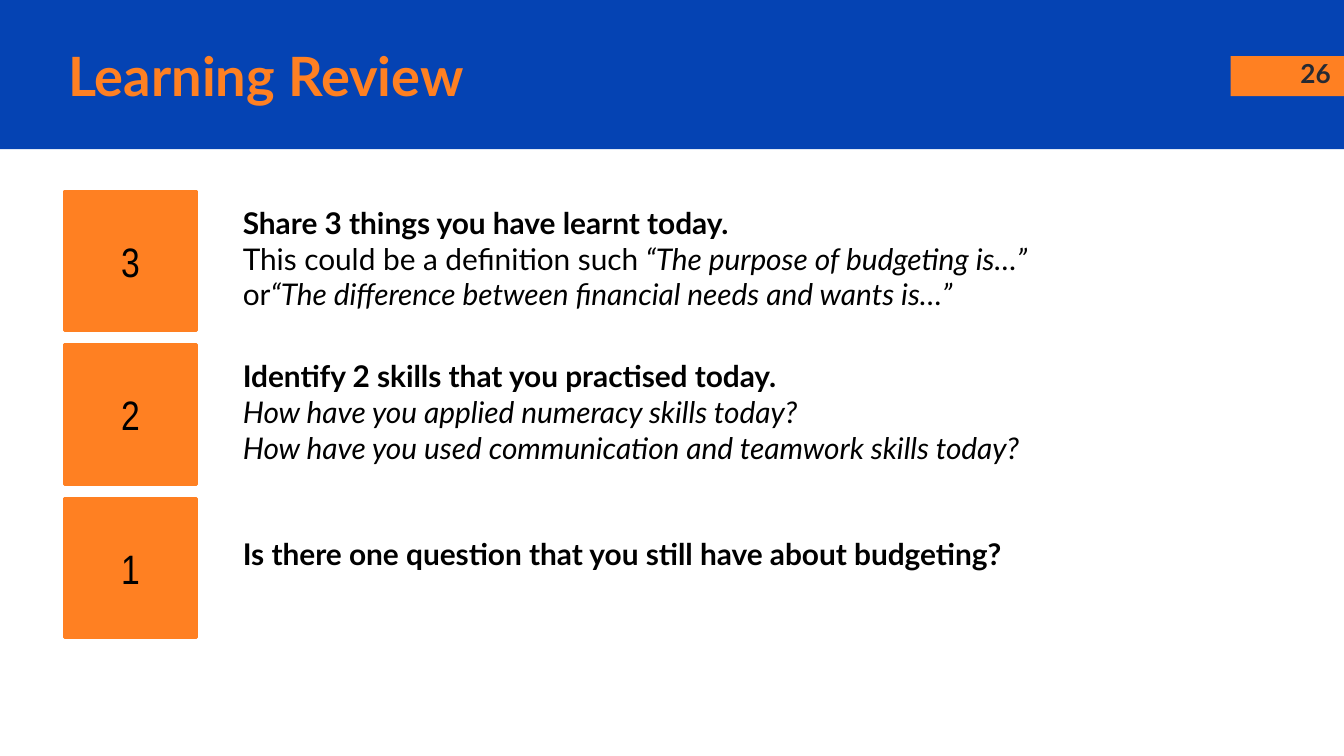
from dataclasses import dataclass

from pptx import Presentation
from pptx import util as u
from pptx.dml.color import RGBColor
from pptx.enum import shapes, text

BLUE = RGBColor(0x05, 0x43, 0xB3)
ORANGE = RGBColor(0xFF, 0x80, 0x22)
DARK = RGBColor(0x26, 0x2A, 0x33)
BLACK = RGBColor(0, 0, 0)
WHITE = RGBColor(0xFF, 0xFF, 0xFF)
BODY_FONT, NUMBER_FONT = "Lato", "Arial Narrow"

SLIDE_W, SLIDE_H = 25.4, 14.28
FIRST_ROW, ROW_STEP = 3.61, 2.9
TILE_LEFT, TILE_W, TILE_H = 1.22, 2.49, 2.64
PROMPT_LEFT = 4.34


@dataclass(frozen=True)
class Box:
    left: float
    top: float
    width: float
    height: float

    def lengths(self) -> list[u.Length]:
        return [u.Cm(v) for v in (self.left, self.top, self.width, self.height)]


@dataclass(frozen=True)
class Run:
    words: str
    bold: bool = False
    italic: bool = False


@dataclass(frozen=True)
class Step:
    number: str
    width: float
    height: float
    paragraphs: list[list[Run]]
    drop: float = 0  # distance of the prompt below the top of its row


STEPS = [
    Step("3", 16.79, 2.57, [
        [Run("Share 3 things you have learnt today.", bold=True)],
        [Run("This could be a definition such"),
         Run(" “The purpose of budgeting is…” ", italic=True),
         Run("or"),
         Run("“The difference between financial needs and wants is…”", italic=True)],
    ]),
    Step("2", 18.44, 2.57, [
        [Run("Identify 2 skills that you practised today.", bold=True)],
        [Run("How have you applied numeracy skills today?", italic=True)],
        [Run("How have you used communication and teamwork skills today?", italic=True)],
    ]),
    Step("1", 17.63, 1.19, [
        [Run("Is there one question that you still have about budgeting?", bold=True)],
    ], drop=0.45),
]


def add_rect(s, box: Box, fill: RGBColor, outlined: bool = False):
    sp = s.shapes.add_shape(shapes.MSO_SHAPE.RECTANGLE, *box.lengths())
    sp.shadow.inherit = False
    sp.fill.solid()
    sp.fill.fore_color.rgb = fill
    if outlined:
        sp.line.color.rgb = fill
        sp.line.width = u.Pt(1.5)
    else:
        sp.line.fill.background()
    return sp


def write(sp, paragraphs: list[list[Run]], size: float, color: RGBColor = BLACK,
          font: str = BODY_FONT, align=text.PP_ALIGN.LEFT,
          anchor=text.MSO_ANCHOR.TOP) -> None:
    """Fill the text frame of a shape, one paragraph per list of runs."""
    tf = sp.text_frame
    tf.word_wrap = True
    tf.vertical_anchor = anchor
    tf.margin_left = tf.margin_right = tf.margin_top = tf.margin_bottom = u.Cm(0.25)
    for i, runs in enumerate(paragraphs):
        p = tf.add_paragraph() if i else tf.paragraphs[0]
        p.alignment = align
        for run in runs:
            r = p.add_run()
            r.text = run.words
            r.font.name = font
            r.font.size = u.Pt(size)
            r.font.color.rgb = color
            r.font.bold = run.bold
            r.font.italic = run.italic


def add_text(s, box: Box, paragraphs: list[list[Run]], size: float, **style) -> None:
    write(s.shapes.add_textbox(*box.lengths()), paragraphs, size, **style)


def add_header(s) -> None:
    add_rect(s, Box(0, 0, SLIDE_W, 2.82), BLUE)
    add_rect(s, Box(23.26, 1.06, 2.14, 0.76), ORANGE)
    add_text(s, Box(23.88, 0.84, 1.52, 1.09), [[Run("26", bold=True)]], 14,
             color=DARK, align=text.PP_ALIGN.RIGHT)
    add_text(s, Box(1.04, 0.71, 16.2, 1.42), [[Run("Learning Review", bold=True)]], 29,
             color=ORANGE, anchor=text.MSO_ANCHOR.MIDDLE)


def add_step(s, step: Step, top: float) -> None:
    tile = add_rect(s, Box(TILE_LEFT, top, TILE_W, TILE_H), ORANGE, outlined=True)
    write(tile, [[Run(step.number)]], 22, font=NUMBER_FONT,
          align=text.PP_ALIGN.CENTER, anchor=text.MSO_ANCHOR.MIDDLE)
    add_text(s, Box(PROMPT_LEFT, top + step.drop, step.width, step.height),
             step.paragraphs, 16)


def main() -> None:
    prs = Presentation()
    prs.slide_width, prs.slide_height = u.Cm(SLIDE_W), u.Cm(SLIDE_H)
    s = prs.slides.add_slide(prs.slide_layouts[6])
    s.background.fill.solid()
    s.background.fill.fore_color.rgb = WHITE
    add_header(s)
    for i, step in enumerate(STEPS):
        add_step(s, step, FIRST_ROW + i * ROW_STEP)
    prs.save("out.pptx")


if __name__ == "__main__":
    main()
